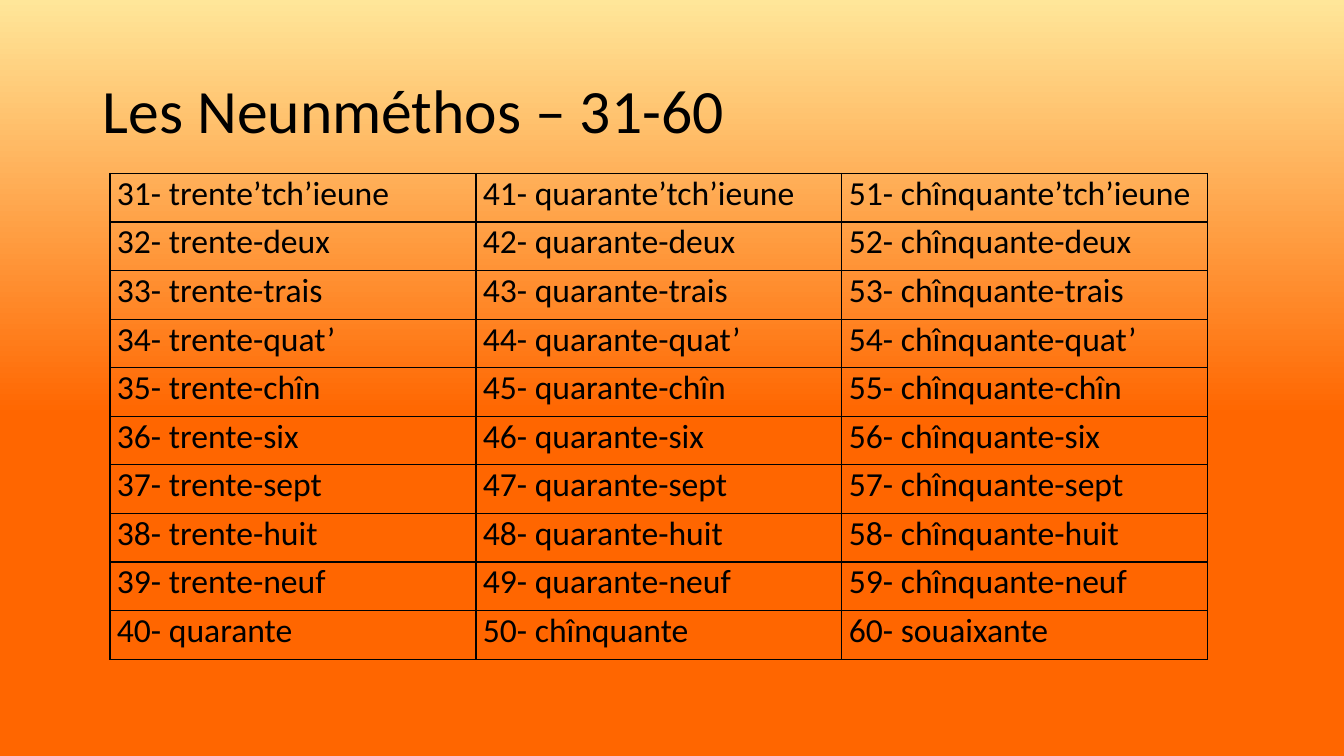
from lxml import etree
from pptx import Presentation
from pptx.dml.color import RGBColor
from pptx.enum import text
from pptx.oxml.ns import qn
from pptx.util import Inches, Pt

# Content
TITLE = "Les Neunméthos – 31-60"
TENS = [(30, "trente"), (40, "quarante"), (50, "chînquante")]
NEXT_TENS = ["quarante", "chînquante", "souaixante"]
UNITS = ["’tch’ieune", "-deux", "-trais", "-quat’", "-chîn",
         "-six", "-sept", "-huit", "-neuf"]
COLORS = {"top": "FFE699", "bottom": "FF6600", "ink": "000000"}
FONT = "Calibri"
COL_WIDTH, ROW_HEIGHT = Inches(3.63), Inches(0.482)


def rgb(name):
    return RGBColor.from_string(COLORS[name])


def style(p, size):
    p.font.name, p.font.size = FONT, Pt(size)
    p.font.color.rgb = rgb("ink")


def add_borders(cell):
    tc_pr = cell._tc.get_or_add_tcPr()
    for side in ("lnL", "lnR", "lnT", "lnB"):
        ln = etree.SubElement(tc_pr, qn(f"a:{side}"), w=str(Pt(1)))
        fill = etree.SubElement(ln, qn("a:solidFill"))
        etree.SubElement(fill, qn("a:srgbClr"), val=COLORS["ink"])


# One column of number names per ten
columns = []
for (start, ten), next_ten in zip(TENS, NEXT_TENS):
    names = [ten + unit for unit in UNITS] + [next_ten]
    columns.append([f"{n}- {name}" for n, name in enumerate(names, start + 1)])


def main():
    prs = Presentation()
    prs.slide_width, prs.slide_height = Inches(13.33), Inches(7.5)
    s = prs.slides.add_slide(prs.slide_layouts[5])

    # Background gradient, running downwards
    bg = s.background.fill
    bg.gradient()
    bg.gradient_angle = 270
    for stop, name, position in zip(bg.gradient_stops, ("top", "bottom"), (0, 0.55)):
        stop.color.rgb = rgb(name)
        stop.position = position

    # Title
    title = s.shapes.title
    title.left, title.top = Inches(0.92), Inches(0.4)
    title.width, title.height = Inches(11.5), Inches(1.45)
    tf = title.text_frame
    tf.text = TITLE
    tf.vertical_anchor = text.MSO_ANCHOR.MIDDLE
    p = tf.paragraphs[0]
    p.alignment, p.line_spacing = text.PP_ALIGN.LEFT, 0.9
    style(p, 44)

    # Number table
    n_rows, n_cols = len(columns[0]), len(columns)
    table = s.shapes.add_table(n_rows, n_cols, Inches(1.09), Inches(1.72),
                               COL_WIDTH * n_cols, ROW_HEIGHT * n_rows).table
    table.first_row = table.horz_banding = False
    for row in table.rows:
        row.height = ROW_HEIGHT
    for c, names in enumerate(columns):
        table.columns[c].width = COL_WIDTH
        for r, name in enumerate(names):
            cell = table.cell(r, c)
            cell.text = name
            cell.margin_left = cell.margin_right = Inches(0.07)
            cell.margin_top = cell.margin_bottom = 0
            add_borders(cell)
            cell.fill.background()
            style(cell.text_frame.paragraphs[0], 24)

    prs.save("out.pptx")


if __name__ == "__main__":
    main()
